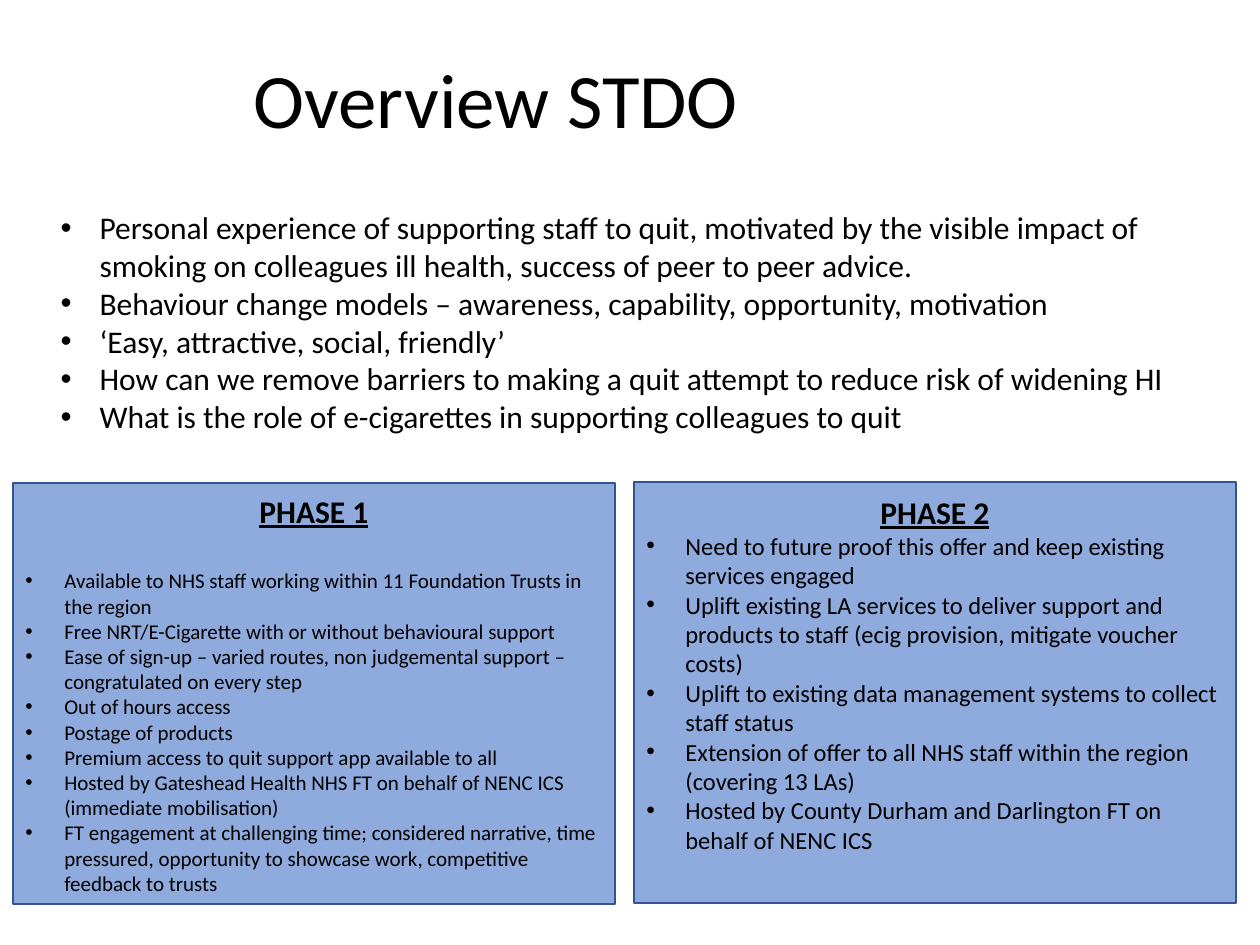
from dataclasses import dataclass

from lxml import etree
from pptx import Presentation
from pptx import util as u
from pptx.dml.color import RGBColor
from pptx.enum import shapes, text
from pptx.oxml import ns

TITLE = "Overview STDO"
MOTIVES = [
    "Personal experience of supporting staff to quit, motivated by the visible impact of smoking on colleagues ill health, success of peer to peer advice.",
    "Behaviour change models – awareness, capability, opportunity, motivation",
    "‘Easy, attractive, social, friendly’",
    "How can we remove barriers to making a quit attempt to reduce risk of widening HI",
    "What is the role of e-cigarettes in supporting colleagues to quit",
]
PHASES = [
    {
        "heading": "PHASE 1",
        "box": (13, 483, 602, 421),
        "size": 12,
        "gap_after_heading": 22,
        "inset_bottom": 6,
        "points": [
            "Available to NHS staff working within 11 Foundation Trusts in the region",
            "Free NRT/E-Cigarette with or without behavioural support",
            "Ease of sign-up – varied routes, non judgemental support – congratulated on every step",
            "Out of hours access",
            "Postage of products",
            "Premium access to quit support app available to all",
            "Hosted by Gateshead Health NHS FT on behalf of NENC ICS (immediate mobilisation)",
            "FT engagement at challenging time; considered narrative, time pressured, opportunity to showcase work, competitive feedback to trusts",
        ],
    },
    {
        "heading": "PHASE 2",
        "box": (634, 482, 602, 421),
        "size": 14,
        "gap_after_heading": 0,
        "inset_bottom": 44,
        "points": [
            "Need to future proof this offer and keep existing services engaged",
            "Uplift existing LA services to deliver support and products to staff (ecig provision, mitigate voucher costs)",
            "Uplift to existing data management systems to collect staff status",
            "Extension of offer to all NHS staff within the region (covering 13 LAs)",
            "Hosted by County Durham and Darlington FT on behalf of NENC ICS",
        ],
    },
]

SLIDE = (1260, 945)
TITLE_BOX = (241, 38, 932, 132)
MOTIVES_BOX = (48, 202, 1172, 242)
INDENT = 39


@dataclass(frozen=True)
class Theme:
    font: str = "Calibri"
    bullet_font: str = "Arial"
    ink: RGBColor = RGBColor.from_string("000000")
    panel: RGBColor = RGBColor.from_string("8FAADC")
    border: RGBColor = RGBColor.from_string("325491")
    title: int = 44
    body: int = 18
    line: int = 1


THEME = Theme()


def px(length):
    return u.Emu(round(length * 914400 / 126))


def place(target, box):
    target.left, target.top, target.width, target.height = map(px, box)


def write(paragraph, words, size, bold=False, underline=False):
    run = paragraph.add_run()
    run.text = words
    font = run.font
    font.name, font.size, font.bold, font.underline = THEME.font, u.Pt(size), bold, underline
    font.color.rgb = THEME.ink


def write_bullet(paragraph, words, size):
    properties = paragraph._p.get_or_add_pPr()
    properties.set("marL", str(px(INDENT)))
    properties.set("indent", str(-px(INDENT)))
    etree.SubElement(properties, ns.qn("a:buFont"), typeface=THEME.bullet_font)
    etree.SubElement(properties, ns.qn("a:buChar"), char="•")
    paragraph.alignment = text.PP_ALIGN.LEFT
    paragraph.space_before = u.Pt(0)
    write(paragraph, words, size)


def add_title(slide):
    title = slide.shapes.title
    place(title, TITLE_BOX)
    frame = title.text_frame
    frame.auto_size = text.MSO_AUTO_SIZE.NONE
    frame.vertical_anchor = text.MSO_ANCHOR.MIDDLE
    heading = frame.paragraphs[0]
    heading.alignment = text.PP_ALIGN.LEFT
    heading.line_spacing = 0.9
    write(heading, TITLE, THEME.title)


def add_motives(slide):
    motives = slide.placeholders[1]
    place(motives, MOTIVES_BOX)
    frame = motives.text_frame
    frame.auto_size = text.MSO_AUTO_SIZE.NONE
    for index, motive in enumerate(MOTIVES):
        paragraph = frame.add_paragraph() if index else frame.paragraphs[0]
        write_bullet(paragraph, motive, THEME.body)


def add_phase(slide, phase):
    panel = slide.shapes.add_shape(shapes.MSO_SHAPE.RECTANGLE, *map(px, phase["box"]))
    panel.shadow.inherit = False
    panel.fill.solid()
    panel.fill.fore_color.rgb = THEME.panel
    panel.line.color.rgb = THEME.border
    panel.line.width = u.Pt(THEME.line)
    frame = panel.text_frame
    frame.word_wrap = True
    frame.vertical_anchor = text.MSO_ANCHOR.MIDDLE
    frame.margin_bottom = px(phase["inset_bottom"])
    heading = frame.paragraphs[0]
    heading.alignment = text.PP_ALIGN.CENTER
    heading.space_after = u.Pt(phase["gap_after_heading"])
    write(heading, phase["heading"], THEME.body, bold=True, underline=True)
    for point in phase["points"]:
        write_bullet(frame.add_paragraph(), point, phase["size"])


def main():
    deck = Presentation()
    deck.slide_width, deck.slide_height = map(px, SLIDE)
    slide = deck.slides.add_slide(deck.slide_layouts[1])
    add_title(slide)
    add_motives(slide)
    for phase in PHASES:
        add_phase(slide, phase)
    deck.save("out.pptx")


if __name__ == "__main__":
    main()
